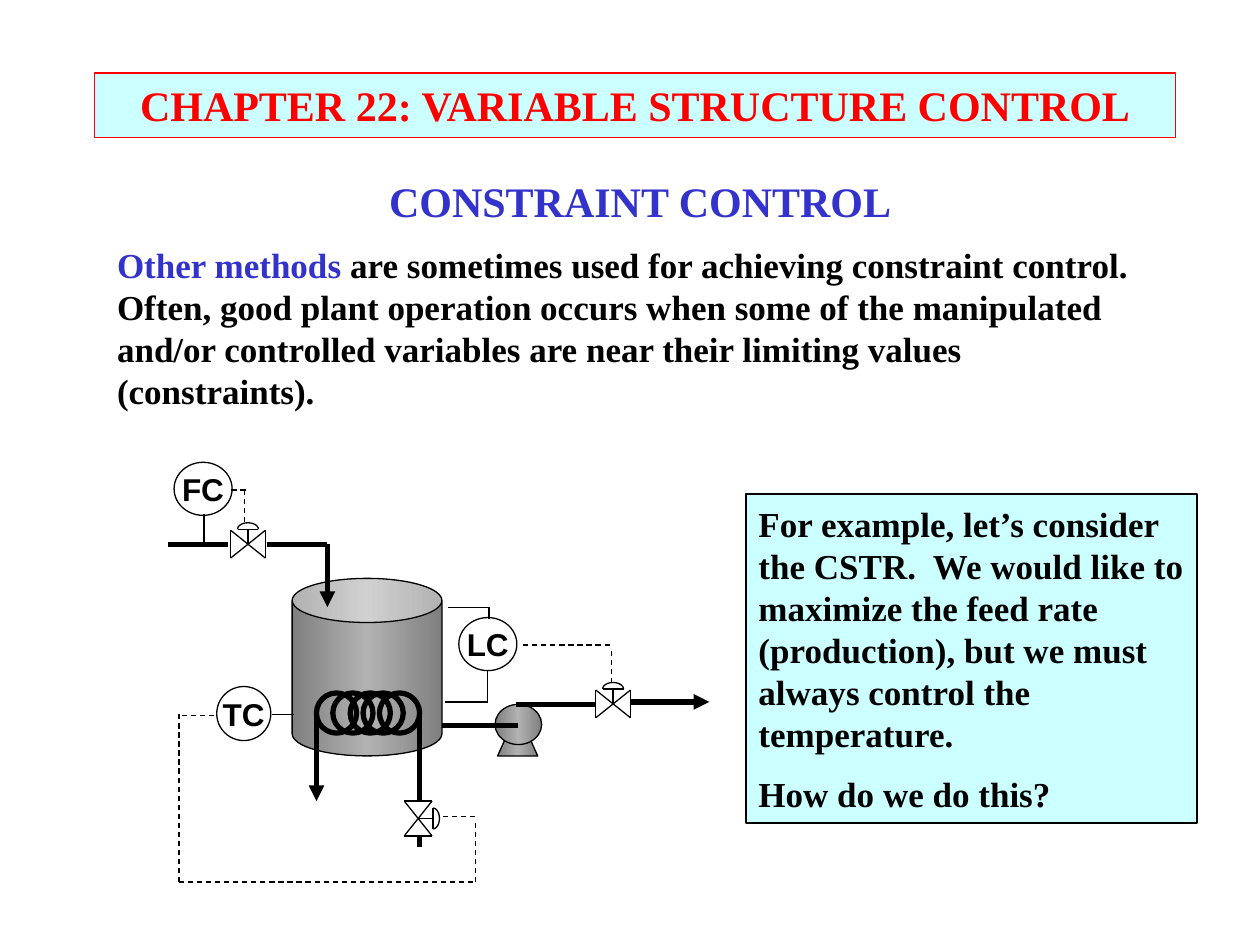
"""Build the constraint control slide with its stirred tank diagram."""
import copy
import math

import lxml.etree
import pptx
import pptx.dml.color
import pptx.enum.dml
import pptx.enum.shapes
import pptx.enum.text
import pptx.oxml.ns
import pptx.util

Cm = pptx.util.Cm
Pt = pptx.util.Pt
RGB = pptx.dml.color.RGBColor
Kind = pptx.enum.shapes.MSO_SHAPE
Align = pptx.enum.text.PP_ALIGN
Anchor = pptx.enum.text.MSO_ANCHOR
qn = pptx.oxml.ns.qn

BLACK = RGB(0x00, 0x00, 0x00)
RED = RGB(0xFF, 0x00, 0x00)
BLUE = RGB(0x33, 0x33, 0xCC)
CYAN = RGB(0xCC, 0xFF, 0xFF)
DARK = RGB(0x7F, 0x7F, 0x7F)
LIGHT = RGB(0xB2, 0xB2, 0xB2)
SERIF = "Times New Roman"

deck = pptx.Presentation()
deck.slide_width = Cm(25.4)
deck.slide_height = Cm(19.05)
slide = deck.slides.add_slide(deck.slide_layouts[6])
shapes = slide.shapes


def draw(kind, x, y, w, h, metal=False, width=0.75):
    shape = shapes.add_shape(kind, Cm(x), Cm(y), Cm(w), Cm(h))
    shape.shadow.inherit = False
    shape.line.color.rgb = BLACK
    shape.line.width = Pt(width)
    if metal:
        shape.fill.gradient()
        shape.fill.gradient_angle = 0
        stops = shape._element.spPr.find(qn("a:gradFill")).find(qn("a:gsLst"))
        mid = copy.deepcopy(stops[0])
        mid.set("pos", "50000")
        stops.insert(1, mid)
        for stop, shade in zip(shape.fill.gradient_stops, (DARK, LIGHT, DARK)):
            stop.color.rgb = shade
    else:
        shape.fill.background()
    return shape


def link(x1, y1, x2, y2, width=0.75, dash=False, arrow=False):
    wire = shapes.add_connector(
        pptx.enum.shapes.MSO_CONNECTOR.STRAIGHT, Cm(x1), Cm(y1), Cm(x2), Cm(y2))
    wire.line.color.rgb = BLACK
    wire.line.width = Pt(width)
    if dash:
        wire.line.dash_style = pptx.enum.dml.MSO_LINE.DASH
    if arrow:
        ln = wire._element.spPr.find(qn("a:ln"))
        lxml.etree.SubElement(ln, qn("a:tailEnd"), type="triangle")
    lxml.etree.SubElement(wire._element.spPr, qn("a:effectLst"))


panels = [
    (1.91, 1.47, 21.79, 1.3, RED, [
        (24, RED, Align.CENTER, "", "CHAPTER 22: VARIABLE STRUCTURE CONTROL")]),
    (2.11, 3.38, 21.59, 5.08, None, [
        (24, BLUE, Align.CENTER, "", "CONSTRAINT CONTROL"),
        (20, BLACK, Align.LEFT, "Other methods",
         " are sometimes used for achieving constraint control.  Often, good "
         "plant operation occurs when some of the manipulated and/or controlled "
         "variables are near their limiting values (constraints).")]),
    (15.04, 9.96, 9.09, 6.63, BLACK, [
        (20, BLACK, Align.LEFT, "",
         "For example, let’s consider the CSTR.  We would like to maximize the "
         "feed rate (production), but we must always control the temperature."),
        (20, BLACK, Align.LEFT, "", "How do we do this?")]),
]
for x, y, w, h, edge, paras in panels:
    if edge is None:
        box = shapes.add_textbox(Cm(x), Cm(y), Cm(w), Cm(h))
    else:
        box = draw(Kind.RECTANGLE, x, y, w, h)
        box.fill.solid()
        box.fill.fore_color.rgb = CYAN
        box.line.color.rgb = edge
    frame = box.text_frame
    frame.word_wrap = True
    frame.vertical_anchor = Anchor.MIDDLE
    for i, (size, ink, align, lead, text) in enumerate(paras):
        para = frame.add_paragraph() if i else frame.paragraphs[0]
        para.alignment = align
        para.font.name = SERIF
        para.font.size = Pt(size)
        para.font.bold = True
        para.font.color.rgb = ink
        if i:
            para.space_before = Pt(size / 2)
        if lead:
            run = para.add_run()
            run.text = lead
            run.font.color.rgb = BLUE
        para.add_run().text = text

tank = draw(Kind.CAN, 5.89, 11.66, 3.02, 3.58, metal=True)
tank.adjustments[0] = 0.295
base = draw(Kind.FLOWCHART_MANUAL_OPERATION, 10.03, 14.88, 0.81, 0.36, metal=True)
base.rotation = 180
for x in (6.38, 6.71, 7.06, 7.32, 7.65):
    draw(Kind.FLOWCHART_CONNECTOR, x, 13.97, 0.81, 0.81, width=3)
draw(Kind.OVAL, 9.98, 14.2, 0.94, 0.81, metal=True)

pipes = [
    (6.38, 14.43, 6.38, 16.15, True),
    (8.46, 14.43, 8.46, 16.15, False),
    (8.46, 16.84, 8.46, 17.07, False),
    (10.44, 14.63, 8.92, 14.63, False),
    (10.41, 14.2, 12.01, 14.2, False),
    (12.73, 14.15, 14.3, 14.15, True),
    (4.6, 10.97, 3.38, 10.97, False),
    (6.6, 10.97, 5.38, 10.97, False),
    (6.6, 10.97, 6.6, 12.24, True),
]
for *ends, arrow in pipes:
    link(*ends, width=3, arrow=arrow)

taps = [
    (5.49, 14.4, 5.92, 14.4),
    (9.04, 12.24, 9.88, 12.24),
    (9.86, 12.24, 9.86, 12.47),
    (8.97, 14.15, 9.83, 14.15),
    (9.83, 14.15, 9.83, 13.51),
    (4.11, 10.36, 4.11, 11),
]
for ends in taps:
    link(*ends)

wires = [
    (12.32, 13.77, 12.32, 13.06),
    (12.29, 13, 10.49, 13),
    (4.93, 10.52, 4.93, 9.88),
    (4.95, 9.88, 4.65, 9.88),
    (4.32, 14.43, 3.61, 14.43),
    (3.61, 14.4, 3.61, 17.78),
    (3.61, 17.78, 9.53, 17.78),
    (9.58, 17.78, 9.58, 16.51),
    (9.58, 16.46, 8.94, 16.46),
]
for ends in wires:
    link(*ends, dash=True)

strokes = [
    ((-0.35, -0.28), (-0.35, 0.28)),
    ((0.35, -0.28), (0.35, 0.28)),
    ((-0.35, -0.28), (0.35, 0.28)),
    ((-0.35, 0.28), (0.35, -0.28)),
    ((0, 0), (0, -0.3)),
    ((-0.21, -0.3), (0.21, -0.3)),
]
arc = [math.pi * k / 16 for k in range(17)]
dome = [(0.21 * math.cos(a), -0.3 - 0.13 * math.sin(a)) for a in arc]
for x, y, turn in ((5, 10.97, 0), (12.36, 14.19, 0), (8.43, 16.5, 1)):
    lines = [[(x - v, y + u) if turn else (x + u, y + v) for u, v in line]
             for line in strokes + [dome]]
    for start, end in lines[:-1]:
        link(*start, *end)
    points = [(Cm(u), Cm(v)) for u, v in lines[-1]]
    pen = shapes.build_freeform(*points[0])
    pen.add_line_segments(points[1:], close=False)
    cap = pen.convert_to_shape()
    cap.shadow.inherit = False
    cap.fill.background()
    cap.line.color.rgb = BLACK
    cap.line.width = Pt(0.75)

for name, x, y, w, h in (("TC", 4.37, 13.84, 1.09, 1.09),
                         ("LC", 9.25, 12.45, 1.17, 1.07),
                         ("FC", 3.51, 9.32, 1.17, 1.07)):
    frame = draw(Kind.OVAL, x, y, w, h).text_frame
    frame.word_wrap = False
    frame.vertical_anchor = Anchor.MIDDLE
    para = frame.paragraphs[0]
    para.text = name
    para.alignment = Align.CENTER
    para.font.name = "Arial"
    para.font.size = Pt(18)
    para.font.bold = True
    para.font.color.rgb = BLACK

deck.save("out.pptx")
